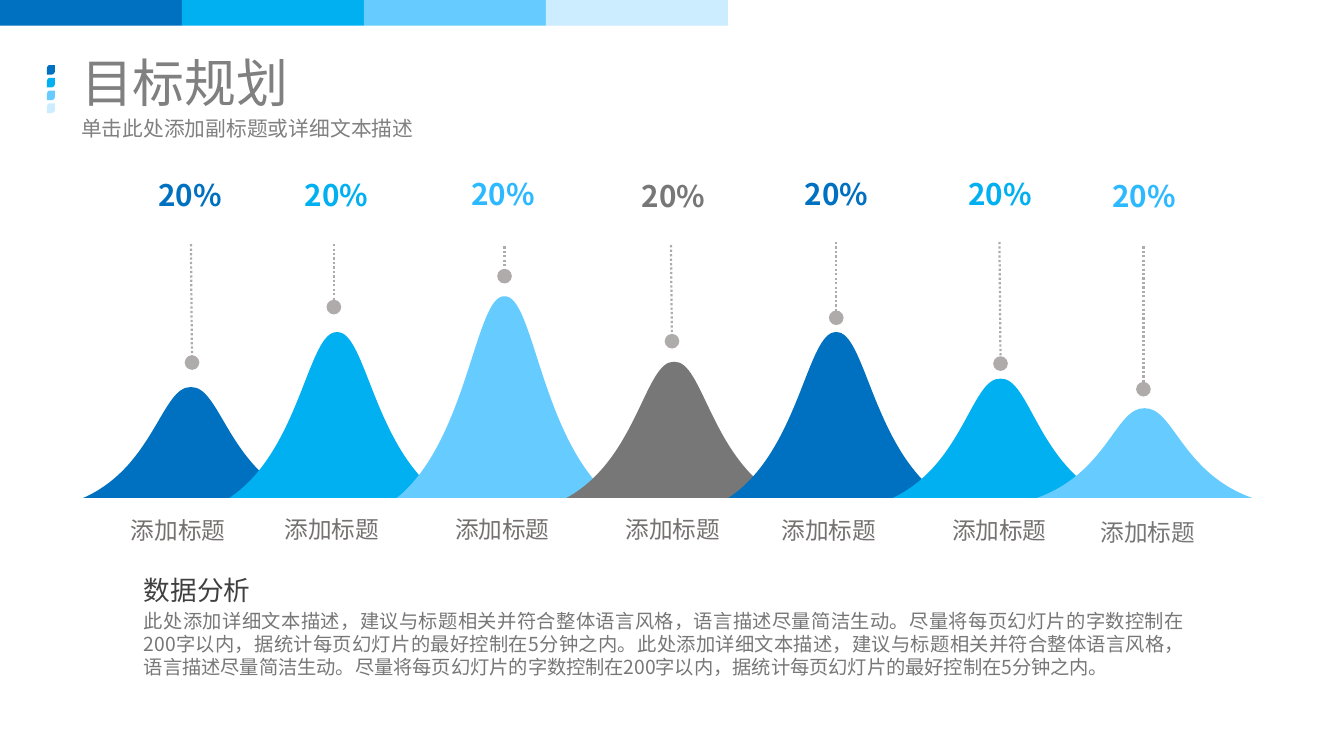
from typing import NamedTuple

from lxml.etree import SubElement
from pptx import Presentation
from pptx.dml.color import RGBColor
from pptx.enum.dml import MSO_LINE
from pptx.enum.shapes import MSO_CONNECTOR, MSO_SHAPE
from pptx.enum.text import MSO_ANCHOR, MSO_AUTO_SIZE, PP_ALIGN
from pptx.oxml.ns import qn
from pptx.util import Emu, Pt

FONT = "Noto Sans CJK SC"
EMU_PER_PX = 9144  # 100 px to the inch
DEEP, BRIGHT, SKY, PALE = "0070C0", "00B0F0", "66CCFF", "CCECFF"
SKY_TEXT, GREY, LABEL_GREY = "2DB9FF", "777777", "767171"
HEADING_GREY, STEM_GREY, DARK = "808080", "AFABAB", "404040"
BASELINE, HALF_WIDTH = 467, 101

Point = tuple[float, float]


class Box(NamedTuple):
    left: int
    top: int
    width: int
    height: int


class Peak(NamedTuple):
    center: int
    top: int
    fill: str
    percent: Box
    percent_color: str
    label_left: int
    label_top: int
    label_color: str
    stem: tuple[int, int, int, int]


class Line(NamedTuple):
    """One paragraph of text in a single style."""
    text: str
    size: int
    color: str
    bold: bool = False
    align: PP_ALIGN = PP_ALIGN.LEFT
    space_before: float = 0


PEAKS = [
    Peak(179, 362, DEEP, Box(124, 161, 108, 44), DEEP, 89, 479, LABEL_GREY, (179, 229, 180, 340)),
    Peak(316, 310, BRIGHT, Box(259, 161, 113, 44), BRIGHT, 233, 478, LABEL_GREY, (313, 229, 313, 288)),
    Peak(473, 276, SKY, Box(425, 160, 93, 44), SKY_TEXT, 393, 478, LABEL_GREY, (473, 231, 473, 259)),
    Peak(632, 338, GREY, Box(591, 162, 81, 44), GREY, 553, 478, LABEL_GREY, (629, 230, 630, 320)),
    Peak(784, 310, DEEP, Box(744, 160, 81, 44), DEEP, 699, 479, LABEL_GREY, (784, 227, 784, 298)),
    Peak(938, 354, BRIGHT, Box(888, 160, 99, 44), BRIGHT, 859, 479, LABEL_GREY, (937, 227, 938, 341)),
    Peak(1073, 382, SKY, Box(1025, 162, 95, 44), SKY_TEXT, 998, 481, GREY, (1072, 231, 1072, 365)),
]

# Outlines: a start point, then three points for every Bezier curve
BELL = [(1, 0), (0.34, 0.28), (0.27, 1), (0, 0.99), (-0.27, 1), (-0.34, 0.28), (-1, 0)]
LEAF = [(2, 0), *[(7.5, 0)] * 3, *[(7.5, 6)] * 3, (7.5, 7.5), (6, 9), (4.5, 9),
        *[(0, 9)] * 3, *[(0, 3)] * 3, (0, 1.5), (1, 0), (2, 0)]

ANALYSIS = (
    "此处添加详细文本描述，建议与标题相关并符合整体语言风格，语言描述尽量简洁生动。"
    "尽量将每页幻灯片的字数控制在200字以内，据统计每页幻灯片的最好控制在5分钟之内。"
)


def px(value: float) -> Emu:
    return Emu(round(value * EMU_PER_PX))


def rgb(color: str) -> RGBColor:
    return RGBColor.from_string(color)


def paint(shape, color: str) -> None:
    shape.shadow.inherit = False
    shape.fill.solid()
    shape.fill.fore_color.rgb = rgb(color)
    shape.line.fill.background()


def add_curved(slide, points: list[Point], color: str) -> None:
    """Draw a freeform, then join each three of its segments into one curve."""
    corners = [(px(x), px(y)) for x, y in points]
    builder = slide.shapes.build_freeform(*corners[0])
    builder.add_line_segments(corners[1:], close=True)
    shape = builder.convert_to_shape()
    segments = list(shape._element.iter(qn("a:lnTo")))
    for first in range(0, len(corners) - 1, 3):
        head, *others = segments[first:first + 3]
        head.tag = qn("a:cubicBezTo")
        for segment in others:
            head.append(segment[0])
            segment.getparent().remove(segment)
    paint(shape, color)


def add_text(slide, box: Box, lines: list[Line], inset: tuple[int, int] = (10, 5),
             anchor: MSO_ANCHOR = MSO_ANCHOR.TOP, grow: bool = False) -> None:
    frame = slide.shapes.add_textbox(*map(px, box)).text_frame
    frame.word_wrap = True
    frame.auto_size = MSO_AUTO_SIZE.SHAPE_TO_FIT_TEXT if grow else MSO_AUTO_SIZE.NONE
    frame.vertical_anchor = anchor
    frame.margin_left = frame.margin_right = px(inset[0])
    frame.margin_top = frame.margin_bottom = px(inset[1])
    for index, line in enumerate(lines):
        paragraph = frame.add_paragraph() if index else frame.paragraphs[0]
        paragraph.alignment = line.align
        paragraph.space_before = Pt(line.space_before)
        run = paragraph.add_run()
        run.text = line.text
        run.font.size = Pt(line.size)
        run.font.bold = line.bold
        run.font.color.rgb = rgb(line.color)
        run.font.name = FONT
        SubElement(run.font._element, qn("a:ea")).set("typeface", FONT)


def add_stem(slide, ends: tuple[int, int, int, int]) -> None:
    connector = slide.shapes.add_connector(MSO_CONNECTOR.STRAIGHT, *map(px, ends))
    connector.line.color.rgb = rgb(STEM_GREY)
    connector.line.width = Pt(1.5)
    connector.line.dash_style = MSO_LINE.ROUND_DOT
    tail = SubElement(connector.line._get_or_add_ln(), qn("a:tailEnd"))
    for name, value in (("type", "oval"), ("w", "lg"), ("len", "lg")):
        tail.set(name, value)
    SubElement(connector._element.spPr, qn("a:effectLst"))


def add_peak(slide, peak: Peak) -> None:
    height = BASELINE - peak.top
    add_curved(slide, [(peak.center + x * HALF_WIDTH, BASELINE - y * height) for x, y in BELL],
               peak.fill)
    add_text(slide, Box(peak.label_left, peak.label_top, 156, 37),
             [Line("添加标题", 16, peak.label_color, align=PP_ALIGN.CENTER)], grow=True)
    add_text(slide, peak.percent,
             [Line("20%", 20, peak.percent_color, True, PP_ALIGN.CENTER)], grow=True)
    add_stem(slide, peak.stem)


def main() -> None:
    presentation = Presentation()
    presentation.slide_width, presentation.slide_height = px(1260), px(709)
    slide = presentation.slides.add_slide(presentation.slide_layouts[6])

    # Seven bell peaks with percentages and labels
    for peak in PEAKS:
        add_peak(slide, peak)

    # Analysis text
    add_text(slide, Box(125, 533, 995, 123), [
        Line("数据分析", 18, DARK, False, PP_ALIGN.JUSTIFY, 3.6),
        Line(ANALYSIS * 2, 13, GREY, False, PP_ALIGN.JUSTIFY, 2.6),
    ])

    # Title and subtitle
    add_text(slide, Box(63, 51, 1134, 51), [Line("目标规划", 35, HEADING_GREY)],
             (13, 6), MSO_ANCHOR.MIDDLE)
    add_text(slide, Box(63, 103, 1134, 42),
             [Line("单击此处添加副标题或详细文本描述", 14, HEADING_GREY, space_before=2.8)], (13, 6))

    # Colour band along the top and the matching leaves beside the title
    for index, color in enumerate((DEEP, BRIGHT, SKY, PALE)):
        band = slide.shapes.add_shape(MSO_SHAPE.RECTANGLE, px(170.6 * index), 0, px(170.6), px(24))
        paint(band, color)
        add_curved(slide, [(44 + x, 61 + 12 * index + y) for x, y in LEAF], color)

    presentation.save("out.pptx")


if __name__ == "__main__":
    main()
